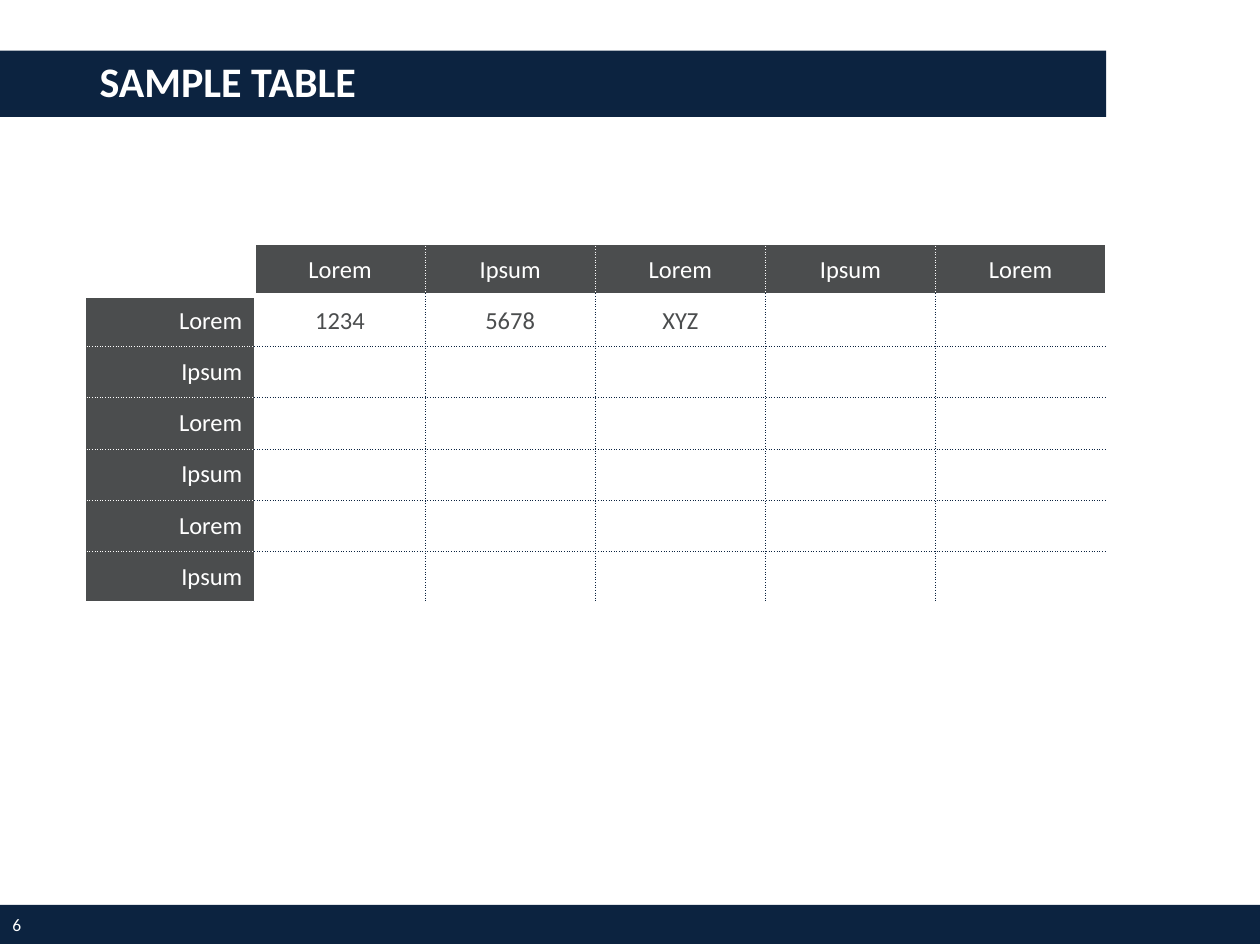
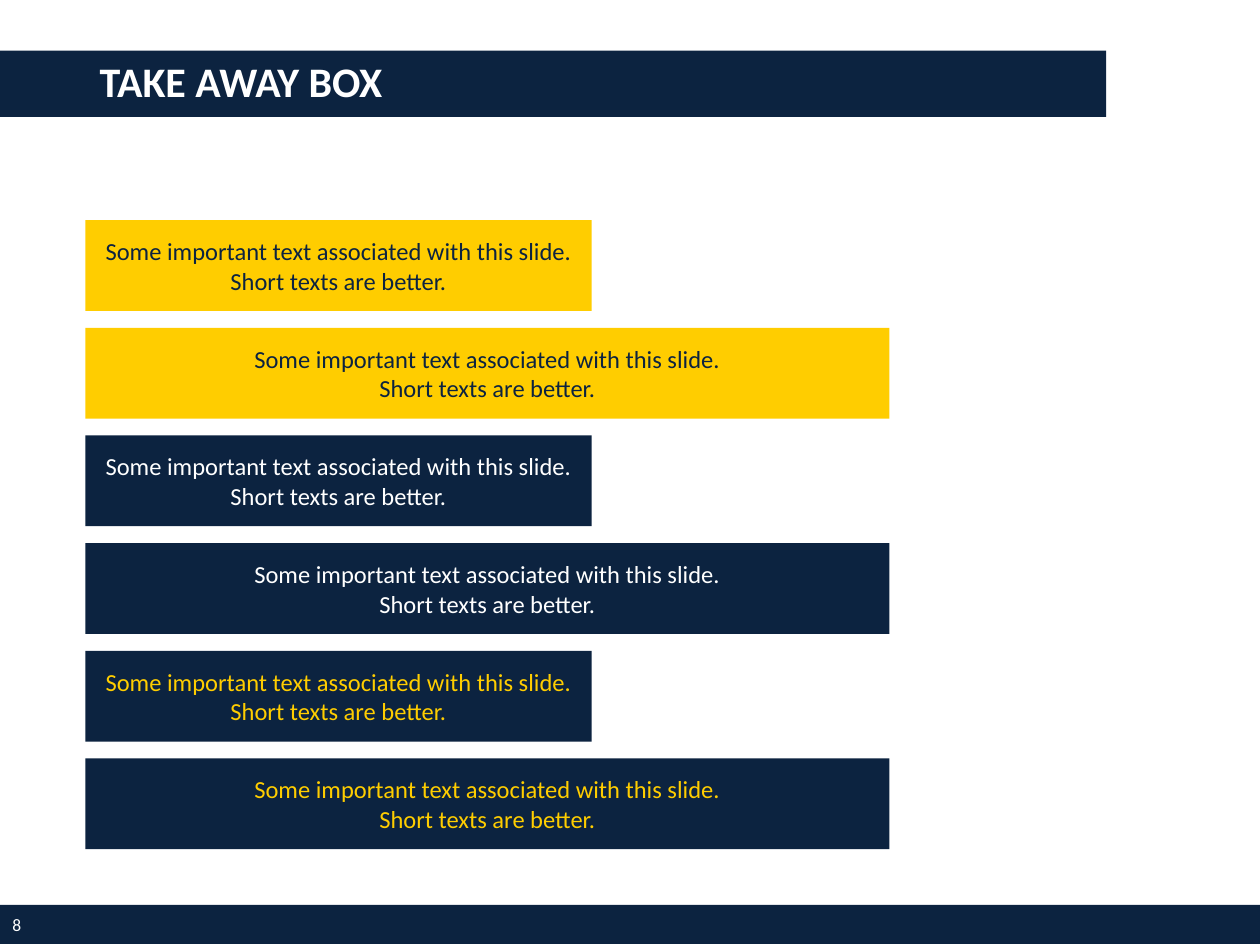
"""Build a sample table slide and a take-away box slide in one navy style."""
from lxml import etree
from pptx import Presentation
from pptx.dml.color import RGBColor
from pptx.enum import shapes, text
from pptx.oxml import ns
from pptx.util import Cm, Pt

NAVY = RGBColor(0x0C, 0x23, 0x40)
GOLD = RGBColor(0xFF, 0xCD, 0x00)
GREY = RGBColor(0x4B, 0x4D, 0x4E)
WHITE = RGBColor(0xFF, 0xFF, 0xFF)
FONT = "Calibri"
LEFT, CENTER, RIGHT = text.PP_ALIGN.LEFT, text.PP_ALIGN.CENTER, text.PP_ALIGN.RIGHT


def add_box(page, place, fill, words="", size=14, color=WHITE, align=CENTER,
            insets=(0.2, 0.1, 0.2, 0.1), bold=False, spacing=1.0):
    box = page.shapes.add_shape(shapes.MSO_SHAPE.RECTANGLE, *map(Cm, place))
    box.shadow.inherit = False
    box.line.fill.background()
    if fill is None:
        box.fill.background()
    else:
        box.fill.solid()
        box.fill.fore_color.rgb = fill
    frame = box.text_frame
    frame.word_wrap = True
    frame.vertical_anchor = text.MSO_ANCHOR.MIDDLE
    frame.margin_left, frame.margin_top, frame.margin_right, frame.margin_bottom = map(Cm, insets)
    frame.text = words
    for para in frame.paragraphs:
        para.alignment = align
        para.line_spacing = spacing
        for span in para.runs:
            span.font.name, span.font.size, span.font.bold = FONT, Pt(size), bold
            span.font.color.rgb = color


def add_border(cell, side, color, width, dash):
    line = etree.SubElement(cell._tc.get_or_add_tcPr(), ns.qn(f"a:ln{side}"), w=str(Pt(width)))
    fill = etree.SubElement(line, ns.qn("a:solidFill"))
    etree.SubElement(fill, ns.qn("a:srgbClr"), val=str(color))
    etree.SubElement(line, ns.qn("a:prstDash"), val=dash)


deck = Presentation()
deck.slide_width, deck.slide_height = Cm(25.4), Cm(19.05)

pages = []
for title, number in (("SAMPLE TABLE", "6"), ("TAKE AWAY BOX", "8")):
    page = deck.slides.add_slide(deck.slide_layouts[6])
    add_box(page, (0, 18.24, 25.4, 0.79), NAVY)
    add_box(page, (0, 1.02, 22.3, 1.34), NAVY, title, size=24, align=LEFT,
            insets=(2.01, 0.13, 0.76, 0.13), bold=True, spacing=0.9)
    add_box(page, (0, 18.24, 1.75, 0.79), None, number, size=10, align=LEFT,
            insets=(0.25, 0, 0.25, 0))
    pages.append(page)
table_page, takeaway_page = pages

ROWS = [
    ["", "Lorem", "Ipsum", "Lorem", "Ipsum", "Lorem"],
    ["Lorem", "1234", "5678", "XYZ", "", ""],
    *[[label, "", "", "", "", ""] for label in ("Ipsum", "Lorem", "Ipsum", "Lorem", "Ipsum")],
]
row_count, column_count = len(ROWS), len(ROWS[0])
COLUMN_WIDTH, ROW_HEIGHT = 3.43, 1.03
table = table_page.shapes.add_table(
    row_count, column_count, Cm(1.71), Cm(4.93),
    Cm(COLUMN_WIDTH * column_count), Cm(ROW_HEIGHT * row_count)).table
table.first_row = table.horz_banding = False
for column in table.columns:
    column.width = Cm(COLUMN_WIDTH)
for row in table.rows:
    row.height = Cm(ROW_HEIGHT)

SOLID_EDGE = (WHITE, 1, "solid")
HEADER_EDGE = (WHITE, 3, "solid")
for r, values in enumerate(ROWS):
    for c, value in enumerate(values):
        cell = table.cell(r, c)
        is_heading = (r == 0) != (c == 0)
        dotted = (WHITE if r == 0 or c == 0 else NAVY, 0.5, "sysDot")
        for side, edge in (("L", c), ("R", c + 1)):
            add_border(cell, side, *(SOLID_EDGE if edge in (0, 1, column_count) else dotted))
        for side, edge in (("T", r), ("B", r + 1)):
            style = SOLID_EDGE if edge in (0, row_count) else HEADER_EDGE if edge == 1 else dotted
            add_border(cell, side, *style)
        if is_heading:
            cell.fill.solid()
            cell.fill.fore_color.rgb = GREY
        else:
            cell.fill.background()
        cell.vertical_anchor = text.MSO_ANCHOR.MIDDLE
        cell.text = value
        para = cell.text_frame.paragraphs[0]
        para.alignment = RIGHT if c == 0 else CENTER
        para.font.size = Pt(14)
        for span in para.runs:
            span.font.name, span.font.size = FONT, Pt(14)
            span.font.color.rgb = WHITE if is_heading else GREY

MESSAGE = "Some important text associated with this slide.\nShort texts are better."
WIDTHS = (10.21, 16.21)
SCHEMES = ((GOLD, NAVY), (NAVY, WHITE), (NAVY, GOLD))
for i in range(len(SCHEMES) * len(WIDTHS)):
    fill, color = SCHEMES[i // 2]
    add_box(takeaway_page, (1.72, 4.44 + 2.17 * i, WIDTHS[i % 2], 1.83), fill, MESSAGE, color=color)

deck.save("out.pptx")
